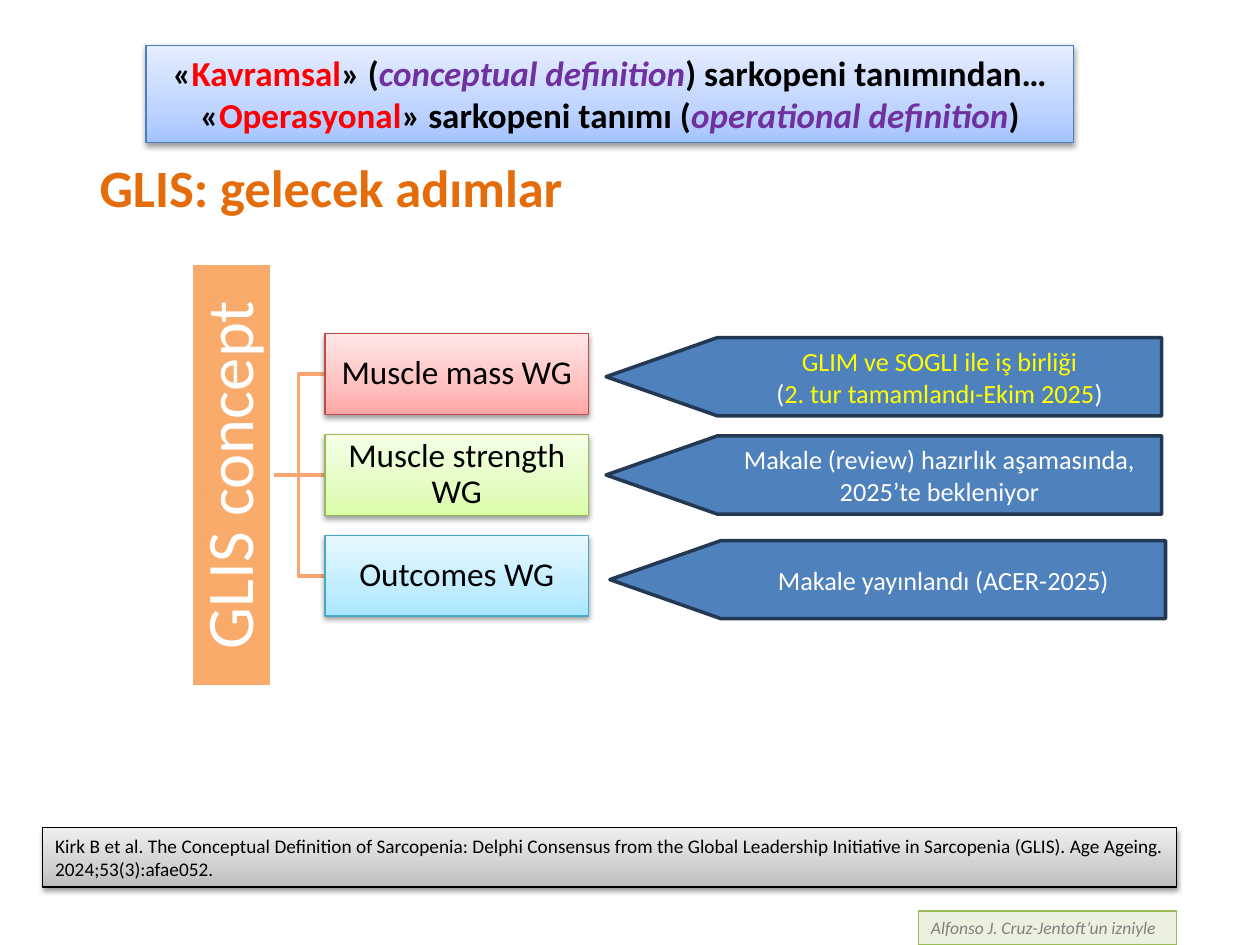
import pptx
import pptx.dml.color
import pptx.enum.shapes
import pptx.enum.text
import pptx.oxml.ns
import pptx.util
from dataclasses import dataclass
from lxml import etree

Inches = pptx.util.Inches
Pt = pptx.util.Pt
qn = pptx.oxml.ns.qn
Shape = pptx.enum.shapes.MSO_SHAPE
Anchor = pptx.enum.text.MSO_ANCHOR
Align = pptx.enum.text.PP_ALIGN


@dataclass(frozen=True)
class Theme:
    font: str = "Calibri"
    black: str = "000000"
    white: str = "FFFFFF"
    red: str = "FF0000"
    purple: str = "7030A0"
    yellow: str = "FFFF00"
    gray: str = "808080"
    title: str = "E46C0A"
    bar: str = "F79646"
    branch: str = "F8A56E"
    arrow: str = "4F81BD"
    arrow_edge: str = "233953"
    credit: str = "EBF1DE"
    credit_edge: str = "9BBB59"
    # Gradients run from the bottom colour to the top one
    header: tuple = ("A4C4FF", "BFD4FF", "E6EEFF")
    header_edge: str = "4B7EBC"
    citation: tuple = ("BDBDBD", "D1D1D1", "EEEEEE")
    mass: tuple = ("FFA6A5", "FFC0BF", "FFE7E7")
    mass_edge: str = "BF4C48"
    strength: tuple = ("DAFDA7", "E4FCC2", "F5FFE7")
    strength_edge: str = "98B955"
    outcomes: tuple = ("A7E6FF", "C1EDFF", "E7F8FF")
    outcomes_edge: str = "46AAC5"
    title_size: float = 30
    bar_size: float = 38
    header_size: float = 20
    group_size: float = 19
    status_size: float = 15
    citation_size: float = 11
    credit_size: float = 10


class SlideBuilder:
    def __init__(self, slide, theme):
        self.slide = slide
        self.theme = theme

    def color(self, value):
        return pptx.dml.color.RGBColor.from_string(value)

    def add_text(self, frame, paragraphs, size, align=Align.CENTER, spacing=None, bold=False):
        """Each paragraph is a list of (text, colour, italic) runs."""
        for index, runs in enumerate(paragraphs):
            paragraph = frame.paragraphs[0] if index == 0 else frame.add_paragraph()
            paragraph.alignment = align
            if spacing:
                paragraph.line_spacing = spacing
            for text, color, italic in runs:
                run = paragraph.add_run()
                run.text = text
                run.font.name = self.theme.font
                run.font.size = Pt(size)
                run.font.bold = bold
                run.font.italic = italic
                run.font.color.rgb = self.color(color)

    def title(self, text, left, top, width, height):
        title = self.slide.shapes.title
        title.left, title.top = Inches(left), Inches(top)
        title.width, title.height = Inches(width), Inches(height)
        title.text_frame.vertical_anchor = Anchor.TOP
        self.add_text(title.text_frame, [[(text, self.theme.title, False)]],
                      self.theme.title_size, Align.LEFT, 0.9, bold=True)

    def shape(self, kind, left, top, width, height, fill, edge, weight=0.75,
              inset=None, anchor=Anchor.TOP):
        shape = self.slide.shapes.add_shape(
            kind, Inches(left), Inches(top), Inches(width), Inches(height))
        shape.shadow.inherit = False
        shape.line.color.rgb = self.color(edge)
        shape.line.width = Pt(weight)
        if isinstance(fill, tuple):
            self.gradient(shape, fill)
            self.shadow(shape)
        else:
            shape.fill.solid()
            shape.fill.fore_color.rgb = self.color(fill)
        frame = shape.text_frame
        frame.word_wrap = True
        frame.vertical_anchor = anchor
        if inset is not None:
            frame.margin_left = frame.margin_right = Inches(inset)
            frame.margin_top = frame.margin_bottom = Inches(inset)
        return shape

    def gradient(self, shape, colors):
        shape.fill.gradient()
        shape.fill.gradient_angle = 90
        stops = shape._element.spPr.find(".//" + qn("a:gsLst"))
        for stop in list(stops):
            stops.remove(stop)
        for position, color in zip((0, 35, 100), colors):
            stop = etree.SubElement(stops, qn("a:gs"), pos=str(position * 1000))
            etree.SubElement(stop, qn("a:srgbClr"), val=color)

    def shadow(self, shape):
        effects = shape._element.spPr.find(qn("a:effectLst"))
        outer = etree.SubElement(effects, qn("a:outerShdw"), blurRad="40000",
                                 dist="20000", dir="5400000", rotWithShape="0")
        color = etree.SubElement(outer, qn("a:srgbClr"), val=self.theme.black)
        etree.SubElement(color, qn("a:alpha"), val="38000")

    def branch(self, left, right, start, end):
        """Line from the bar to a group, with an elbow when heights differ."""
        if start == end:
            line = self.slide.shapes.add_connector(
                pptx.enum.shapes.MSO_CONNECTOR.STRAIGHT,
                Inches(left), Inches(start), Inches(right), Inches(end))
            etree.SubElement(line._element.spPr, qn("a:effectLst"))
        else:
            middle = Inches((left + right) / 2)
            elbow = self.slide.shapes.build_freeform(Inches(left), Inches(start))
            elbow.add_line_segments([(middle, Inches(start)), (middle, Inches(end)),
                                     (Inches(right), Inches(end))], close=False)
            line = elbow.convert_to_shape()
            line.fill.background()
            line.shadow.inherit = False
        line.line.color.rgb = self.color(self.theme.branch)
        line.line.width = Pt(2)

    def side_bar(self, text, left, top, width, height):
        # Laid out flat, then turned to read upwards
        bar = self.shape(Shape.RECTANGLE, left + (width - height) / 2,
                         top + (height - width) / 2, height, width,
                         self.theme.bar, self.theme.white, 2, 0.03, Anchor.MIDDLE)
        bar.rotation = 270
        color = bar._element.spPr.find(qn("a:solidFill"))[0]
        etree.SubElement(color, qn("a:alpha"), val="80000")
        self.add_text(bar.text_frame, [[(text, self.theme.white, False)]],
                      self.theme.bar_size, spacing=0.9)

    def group(self, text, left, top, width, height, fill, edge):
        box = self.shape(Shape.RECTANGLE, left, top, width, height, fill, edge,
                         inset=0.01, anchor=Anchor.MIDDLE)
        self.add_text(box.text_frame, [[(text, self.theme.black, False)]],
                      self.theme.group_size, spacing=0.9)

    def status_arrow(self, paragraphs, left, top, width, height):
        # The tall connector shape is turned to point left; its text stays upright
        arrow = self.shape(Shape.FLOWCHART_OFFPAGE_CONNECTOR, left + (width - height) / 2,
                           top + (height - width) / 2, height, width,
                           self.theme.arrow, self.theme.arrow_edge, 2, anchor=Anchor.MIDDLE)
        arrow.rotation = 90
        arrow.text_frame._txBody.bodyPr.set("vert", "vert270")
        self.add_text(arrow.text_frame, paragraphs, self.theme.status_size)


def main():
    theme = Theme()
    deck = pptx.Presentation()
    deck.slide_width, deck.slide_height = Inches(10), Inches(7.5)
    builder = SlideBuilder(deck.slides.add_slide(deck.slide_layouts[5]), theme)

    builder.title("GLIS: gelecek adımlar", 0.69, 1.24, 8.62, 1.09)

    # Working groups: branches, side bar and boxes
    groups = [("Muscle mass WG", theme.mass, theme.mass_edge),
              ("Muscle strength WG", theme.strength, theme.strength_edge),
              ("Outcomes WG", theme.outcomes, theme.outcomes_edge)]
    bar_right, group_left, group_height = 2.16, 2.58, 0.64
    group_tops = [2.65 + 0.8 * row for row in range(len(groups))]
    centers = [top + group_height / 2 for top in group_tops]
    for center in centers:
        builder.branch(bar_right, group_left, centers[1], center)
    builder.side_bar("GLIS concept", 1.52, 2.09, 0.64, 3.36)
    for (name, fill, edge), top in zip(groups, group_tops):
        builder.group(name, group_left, top, 2.09, group_height, fill, edge)

    # Status of each working group
    statuses = [
        (4.81, 2.68, [[("GLIM ve SOGLI ile iş birliği", theme.yellow, False)],
                      [("(", theme.white, False),
                       ("2. tur tamamlandı-Ekim 2025", theme.yellow, False),
                       (")", theme.white, False)]]),
        (4.81, 3.46, [[("Makale (review) hazırlık aşamasında, 2025’te bekleniyor",
                        theme.white, False)]]),
        (4.84, 4.29, [[("Makale yayınlandı (ACER-2025)", theme.white, False)]]),
    ]
    for left, top, paragraphs in statuses:
        builder.status_arrow(paragraphs, left, top, 4.41, 0.62)

    # Citation and credit
    citation = builder.shape(Shape.RECTANGLE, 0.34, 6.57, 9, 0.47,
                             theme.citation, theme.black)
    builder.add_text(citation.text_frame, [[(
        "Kirk B et al. The Conceptual Definition of Sarcopenia: Delphi Consensus from the "
        "Global Leadership Initiative in Sarcopenia (GLIS). Age Ageing. 2024;53(3):afae052.",
        theme.black, False)]], theme.citation_size, Align.JUSTIFY)
    credit = builder.shape(Shape.RECTANGLE, 7.29, 7.23, 2.05, 0.27,
                           theme.credit, theme.credit_edge)
    builder.add_text(credit.text_frame,
                     [[("Alfonso J. Cruz-Jentoft’un izniyle", theme.gray, True)]],
                     theme.credit_size, Align.LEFT)

    # Header with both definitions
    header = builder.shape(Shape.RECTANGLE, 1.16, 0.36, 7.36, 0.77,
                           theme.header, theme.header_edge)
    builder.add_text(header.text_frame, [[
        ("«", theme.black, False), ("Kavramsal", theme.red, False),
        ("» (", theme.black, False), ("conceptual definition", theme.purple, True),
        (") sarkopeni tanımından… «", theme.black, False),
        ("Operasyonal", theme.red, False), ("» sarkopeni tanımı (", theme.black, False),
        ("operational definition", theme.purple, True), (")", theme.black, False),
    ]], theme.header_size, bold=True)

    deck.save("out.pptx")


if __name__ == "__main__":
    main()
